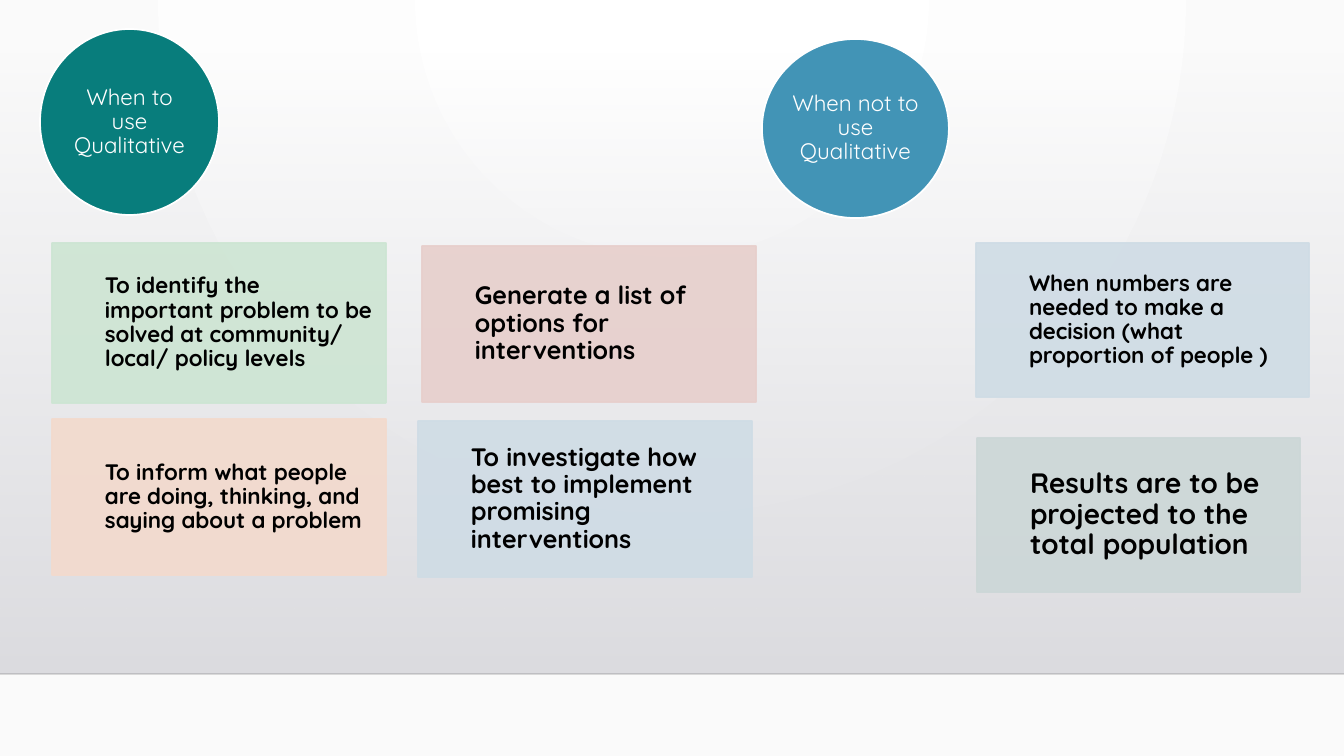
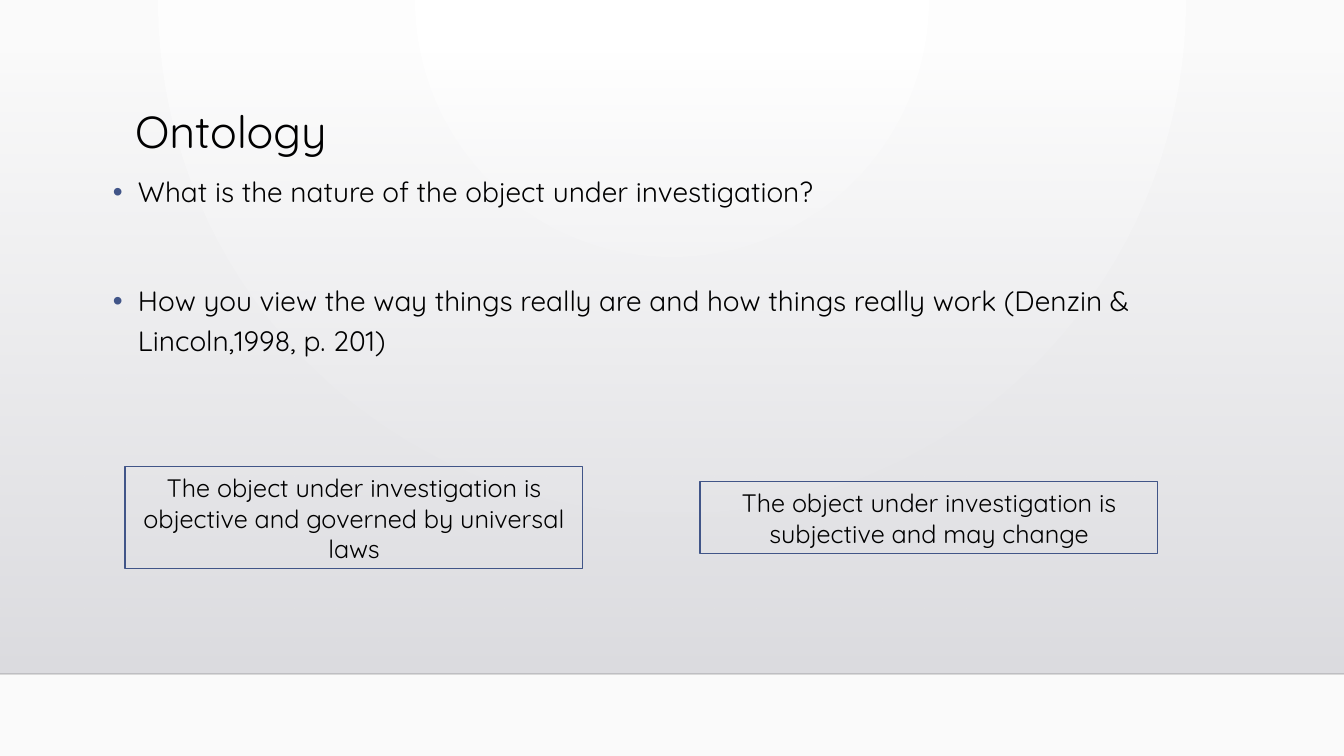
from lxml import etree
from pptx import Presentation
from pptx import util as u
from pptx.dml.color import RGBColor
from pptx.enum import shapes, text
from pptx.oxml import ns, parse_xml

PX = 914400 / 100.8
WIDTH, HEIGHT = 1344, 756
FONT = "Quicksand"
BLACK = RGBColor(0, 0, 0)
WHITE = RGBColor(0xFF, 0xFF, 0xFF)
PAPER = RGBColor(0xFA, 0xFA, 0xFA)
MIST = RGBColor(0xDC, 0xDC, 0xE0)
HAZE = RGBColor(0xDE, 0xDE, 0xE2)
INDIGO = RGBColor(0x41, 0x55, 0x88)
TEAL = RGBColor(0x08, 0x7D, 0x7C)
BLUE = RGBColor(0x42, 0x94, 0xB6)
PALE_GREEN = RGBColor(0xCD, 0xE5, 0xD3)
PALE_ORANGE = RGBColor(0xF3, 0xDA, 0xCD)
PALE_RED = RGBColor(0xE7, 0xCF, 0xCC)
PALE_BLUE = RGBColor(0xCF, 0xDC, 0xE5)
PALE_TEAL = RGBColor(0xCC, 0xD7, 0xD7)

QUALITATIVE_CARDS = [
    ((12, 214, 334, 160), PALE_GREEN, 16,
     "To identify the important problem to be solved at community/ local/ policy levels"),
    ((12, 390, 334, 156), PALE_ORANGE, 16,
     "To inform what people are doing, thinking, and saying about a problem"),
    ((382, 217, 334, 156), PALE_RED, 18,
     "Generate a list of options for interventions"),
    ((378, 392, 334, 156), PALE_BLUE, 18,
     "To investigate how best to implement promising interventions"),
]
OTHER_CARDS = [
    ((214, 204, 333, 154), PALE_BLUE, 16,
     "When numbers are needed to make a decision (what proportion of people )"),
    ((215, 399, 323, 154), PALE_TEAL, 20,
     "Results are to be projected to the total population"),
]


def px(length):
    """Turn a length in px into EMU."""
    return u.Emu(round(length * PX))


def apply(target, values):
    """Set each named value on the target."""
    for name, value in values.items():
        setattr(target, name, value)


def place(shape, box):
    """Move and size a shape to a box in px."""
    apply(shape, dict(zip(("left", "top", "width", "height"), map(px, box))))


def add_child(parent, tag, **attributes):
    """Append a DrawingML element to a parent."""
    return etree.SubElement(parent, ns.qn(tag), attributes)


def set_alpha(shape, percent):
    """Make every colour of a shape's fill and line partly transparent."""
    for color in shape.element.spPr.iter(ns.qn("a:srgbClr")):
        add_child(color, "a:alpha", val=str(percent * 1000))


def gradient(stops, direction):
    """Build a gradient fill from colour and opacity stops."""
    entries = "".join(
        f'<a:gs pos="{position}"><a:srgbClr val="{color}"><a:alpha val="{alpha}"/>'
        "</a:srgbClr></a:gs>"
        for position, (color, alpha) in zip((0, 100000), stops))
    return parse_xml(f'<a:gradFill {ns.nsdecls("a")} rotWithShape="1">'
                     f"<a:gsLst>{entries}</a:gsLst>{direction}</a:gradFill>")


def replace_fill(properties, fill):
    """Swap the solid fill of a property element for another fill."""
    properties.replace(properties.find(ns.qn("a:solidFill")), fill)


def add_shape(slide, kind, box, fill=None, line=None, weight=1.25):
    """Add a flat preset shape."""
    shape = slide.shapes.add_shape(kind, *map(px, box))
    shape.shadow.inherit = False
    for part, color in ((shape.fill, fill), (shape.line.fill, line)):
        if color is None:
            part.background()
        else:
            part.solid()
            part.fore_color.rgb = color
    if line is not None:
        shape.line.width = u.Pt(weight)
    return shape


def write(shape, words, size, color=BLACK, bold=False, margins=(10, 5, 10, 5),
          anchor=text.MSO_ANCHOR.MIDDLE, **paragraph_format):
    """Fill a shape with one formatted paragraph for each string."""
    frame = shape.text_frame
    names = ("margin_left", "margin_top", "margin_right", "margin_bottom")
    apply(frame, {"word_wrap": True, "auto_size": text.MSO_AUTO_SIZE.NONE,
                  "vertical_anchor": anchor, **dict(zip(names, map(px, margins)))})
    for index, string in enumerate(words):
        paragraph = frame.add_paragraph() if index else frame.paragraphs[0]
        apply(paragraph, paragraph_format)
        run = paragraph.add_run()
        run.text = string
        apply(run.font, {"name": FONT, "size": u.Pt(size), "bold": bold})
        run.font.color.rgb = color
    return frame.paragraphs


def decorate_master(slide, box):
    """Give the master its background, shaded band and rule."""
    master = slide.slide_layout.slide_master
    master.background.fill.solid()
    replace_fill(master.element.cSld.bg.bgPr, gradient(
        [(WHITE, 100000), (PAPER, 100000)],
        '<a:path path="circle"><a:fillToRect l="43000" t="0" r="43000" b="100000"/></a:path>'))
    left, top, width, height = box
    band = add_shape(slide, shapes.MSO_SHAPE.RECTANGLE, box, MIST)
    replace_fill(band.element.spPr, gradient(
        [(MIST, 0), (HAZE, 100000)], '<a:lin ang="5400000" scaled="0"/>'))
    bottom = top + height
    rule = slide.shapes.add_connector(
        shapes.MSO_CONNECTOR.STRAIGHT, *map(px, (left, bottom, left + width, bottom)))
    rule.line.color.rgb = BLACK
    rule.line.width = u.Pt(1)
    set_alpha(rule, 20)
    add_child(rule.element.spPr, "a:effectLst")
    for position, shape in enumerate((band, rule), 2):
        master.element.cSld.spTree.insert(position, shape.element)


def add_panel(slide, box, circle_color, heading, cards):
    """Add a heading circle with its reason cards."""
    left, top, width, height = box
    for (x, y, card_width, card_height), color, size, words in cards:
        card = add_shape(slide, shapes.MSO_SHAPE.RECTANGLE,
                         (left + x, top + y, card_width, card_height), color, color)
        set_alpha(card, 90)
        inset = size - 4
        write(card, [words], size, bold=True, margins=(53, inset, inset, inset),
              alignment=text.PP_ALIGN.LEFT, line_spacing=0.9)
    circle = add_shape(slide, shapes.MSO_SHAPE.OVAL, box, circle_color, WHITE)
    write(circle, [heading], 16, WHITE, margins=(0, 0, 0, 0),
          alignment=text.PP_ALIGN.CENTER, line_spacing=0.9)


def add_title(slide, box, words):
    """Place and fill the title placeholder."""
    title = slide.shapes.title
    place(title, box)
    write(title, [words], 32, anchor=text.MSO_ANCHOR.TOP,
          alignment=text.PP_ALIGN.LEFT, line_spacing=0.9)


def add_bullets(slide, box, items):
    """Place and fill the body placeholder as a bulleted list."""
    body = slide.placeholders[1]
    place(body, box)
    paragraphs = write(body, items, 20, anchor=text.MSO_ANCHOR.TOP,
                       line_spacing=1.2, space_before=u.Pt(49))
    paragraphs[0].space_before = u.Pt(0)
    for paragraph in paragraphs:
        properties = paragraph._p.get_or_add_pPr()
        properties.set("marL", str(px(25)))
        properties.set("indent", str(px(-25)))
        add_child(add_child(properties, "a:buClr"), "a:srgbClr", val=str(INDIGO))
        add_child(properties, "a:buFont", typeface="Arial")
        add_child(properties, "a:buChar", char="•")


def add_view(slide, box, words):
    """Add an outlined box with one view of the object."""
    view = add_shape(slide, shapes.MSO_SHAPE.RECTANGLE, box, line=INDIGO, weight=0.75)
    write(view, [words], 18, alignment=text.PP_ALIGN.CENTER)


def build_uses(slide):
    """Build the slide on when to use qualitative research."""
    add_panel(slide, (762, 39, 187, 179), BLUE, "When not to use Qualitative", OTHER_CARDS)
    add_panel(slide, (40, 29, 179, 186), TEAL, "When to use Qualitative", QUALITATIVE_CARDS)


def build_ontology(slide):
    """Build the slide on ontology."""
    add_title(slide, (125, 105, 1058, 116), "Ontology")
    add_bullets(slide, (103, 163, 1080, 278), [
        "What is the nature of the object under investigation?",
        "How you view the way things really are and how things really work "
        "(Denzin & Lincoln,1998, p. 201)"])
    add_view(slide, (125, 467, 458, 102),
             "The object under investigation is objective and governed by universal laws")
    add_view(slide, (700, 482, 458, 72),
             "The object under investigation is subjective and may change")


def main():
    """Build and save the presentation."""
    presentation = Presentation()
    apply(presentation, {"slide_width": px(WIDTH), "slide_height": px(HEIGHT)})
    layouts = presentation.slide_layouts
    uses = presentation.slides.add_slide(layouts[6])
    decorate_master(uses, (0, 51, WIDTH, 623))
    build_uses(uses)
    build_ontology(presentation.slides.add_slide(layouts[1]))
    presentation.save("out.pptx")


if __name__ == "__main__":
    main()
